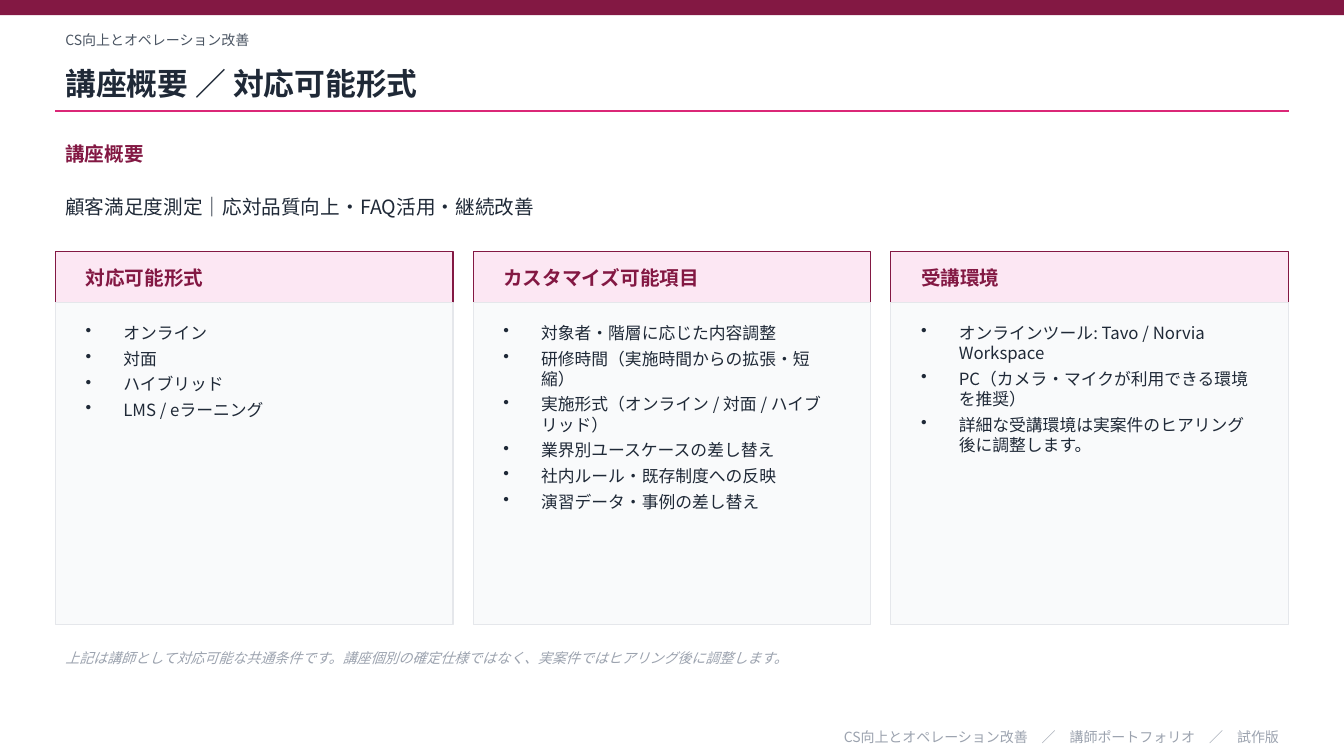
from dataclasses import dataclass

import pptx
import pptx.dml.color
import pptx.enum.shapes
import pptx.enum.text
import pptx.oxml
import pptx.oxml.ns
import pptx.shapes.base
import pptx.slide
import pptx.text.text
import pptx.util

Pt = pptx.util.Pt
Align = pptx.enum.text.PP_ALIGN
Anchor = pptx.enum.text.MSO_ANCHOR

FONT = "Noto Sans CJK JP"
COLORS = {
    "wine": "831843",
    "magenta": "DB2777",
    "pink": "FCE7F3",
    "panel": "F9FAFB",
    "border": "E5E7EB",
    "ink": "1F2937",
    "slate": "4B5563",
    "muted": "9CA3AF",
}

SLIDE_W, SLIDE_H = 960, 540
MARGIN = 39.6
CONTENT_W = SLIDE_W - 2 * MARGIN
GAP = 14.4
CARD_TOP, HEADER_H, BODY_H = 180, 36, 230.4
CARD_PAD = 14.4
BULLET_INDENT = 27


@dataclass(frozen=True)
class Box:
    left: float
    top: float
    width: float
    height: float

    def lengths(self) -> tuple[int, ...]:
        return tuple(Pt(v) for v in (self.left, self.top, self.width, self.height))


@dataclass(frozen=True)
class Card:
    heading: str
    items: tuple[str, ...]


CARDS = (
    Card("対応可能形式", ("オンライン", "対面", "ハイブリッド", "LMS / eラーニング")),
    Card("カスタマイズ可能項目", (
        "対象者・階層に応じた内容調整",
        "研修時間（実施時間からの拡張・短縮）",
        "実施形式（オンライン / 対面 / ハイブリッド）",
        "業界別ユースケースの差し替え",
        "社内ルール・既存制度への反映",
        "演習データ・事例の差し替え",
    )),
    Card("受講環境", (
        "オンラインツール: Tavo / Norvia Workspace",
        "PC（カメラ・マイクが利用できる環境を推奨）",
        "詳細な受講環境は実案件のヒアリング後に調整します。",
    )),
)


def rgb(name: str) -> pptx.dml.color.RGBColor:
    return pptx.dml.color.RGBColor.from_string(COLORS[name])


def add_bullet(p: pptx.text.text._Paragraph) -> None:
    pPr = p._p.get_or_add_pPr()
    pPr.set("marL", str(Pt(BULLET_INDENT)))
    pPr.set("indent", str(-Pt(BULLET_INDENT)))
    bullet = pptx.oxml.parse_xml(f'<a:buChar {pptx.oxml.ns.nsdecls("a")} char="•"/>')
    pPr.append(bullet)
    p.space_after = Pt(4)


def write_text(tf: pptx.text.text.TextFrame, *lines: str, size: float, color: str,
               bold: bool = False, italic: bool = False, bullets: bool = False,
               align: Align = Align.LEFT, anchor: Anchor = Anchor.MIDDLE) -> None:
    """Fill a text frame with one paragraph per line, all in one format."""
    tf.word_wrap = True
    tf.auto_size = pptx.enum.text.MSO_AUTO_SIZE.NONE
    tf.vertical_anchor = anchor
    for i, line in enumerate(lines):
        p = tf.add_paragraph() if i else tf.paragraphs[0]
        p.alignment = align
        if bullets:
            add_bullet(p)
        r = p.add_run()
        r.text = line
        r.font.size = Pt(size)
        r.font.bold = bold
        r.font.italic = italic
        r.font.name = FONT
        r.font.color.rgb = rgb(color)
        east_asian = pptx.oxml.parse_xml(
            f'<a:ea {pptx.oxml.ns.nsdecls("a")} typeface="{FONT}"/>')
        r.font._element.find(pptx.oxml.ns.qn("a:latin")).addnext(east_asian)


def add_label(s: pptx.slide.Slide, box: Box, *lines: str, **style) -> None:
    write_text(s.shapes.add_textbox(*box.lengths()).text_frame, *lines, **style)


def add_rect(s: pptx.slide.Slide, box: Box, fill: str, line: str | None = None) -> None:
    sp = s.shapes.add_shape(pptx.enum.shapes.MSO_SHAPE.RECTANGLE, *box.lengths())
    sp.shadow.inherit = False
    sp.fill.solid()
    sp.fill.fore_color.rgb = rgb(fill)
    if line:
        sp.line.color.rgb = rgb(line)
        sp.line.width = Pt(0.75)
    else:
        sp.line.fill.background()


def add_title_rule(s: pptx.slide.Slide, y: float) -> None:
    rule = s.shapes.add_connector(pptx.enum.shapes.MSO_CONNECTOR.STRAIGHT,
                                  Pt(MARGIN), Pt(y), Pt(MARGIN + CONTENT_W), Pt(y))
    rule.line.color.rgb = rgb("magenta")
    rule.line.width = Pt(1)
    rule._element.spPr.append(
        pptx.oxml.parse_xml(f'<a:effectLst {pptx.oxml.ns.nsdecls("a")}/>'))


def add_card(s: pptx.slide.Slide, card: Card, left: float, width: float) -> None:
    body_top = CARD_TOP + HEADER_H
    text_left, text_w = left + CARD_PAD, width - 2 * CARD_PAD
    add_rect(s, Box(left, CARD_TOP, width, HEADER_H), "pink", "wine")
    add_label(s, Box(text_left, CARD_TOP, text_w, HEADER_H), card.heading,
              size=14, color="wine", bold=True)
    add_rect(s, Box(left, body_top, width, BODY_H), "panel", "border")
    add_label(s, Box(text_left, body_top + 10.8, text_w, 205.2), *card.items,
              size=12, color="ink", bullets=True, anchor=Anchor.TOP)


def main() -> None:
    prs = pptx.Presentation()
    prs.slide_width, prs.slide_height = Pt(SLIDE_W), Pt(SLIDE_H)
    s = prs.slides.add_slide(prs.slide_layouts.get_by_name("Title Only"))

    title = s.shapes.title
    title.left, title.top, title.width, title.height = Box(
        MARGIN, 39.6, CONTENT_W, 39.6).lengths()
    write_text(title.text_frame, "講座概要 ／ 対応可能形式", size=22, color="ink", bold=True)

    add_rect(s, Box(0, 0, SLIDE_W, 10.8), "wine")
    add_label(s, Box(MARGIN, 18, CONTENT_W, 21.6), "CS向上とオペレーション改善",
              size=10, color="slate")
    add_title_rule(s, 79.2)
    add_label(s, Box(MARGIN, 97.2, CONTENT_W, 25.2), "講座概要",
              size=14, color="wine", bold=True)
    add_label(s, Box(MARGIN, 126, CONTENT_W, 43.2),
              "顧客満足度測定｜応対品質向上・FAQ活用・継続改善", size=14, color="ink")

    card_w = (CONTENT_W - GAP * (len(CARDS) - 1)) / len(CARDS)
    for i, card in enumerate(CARDS):
        add_card(s, card, MARGIN + i * (card_w + GAP), card_w)

    add_label(s, Box(MARGIN, 457.2, CONTENT_W, 25.2),
              "上記は講師として対応可能な共通条件です。"
              "講座個別の確定仕様ではなく、実案件ではヒアリング後に調整します。",
              size=10, color="muted", italic=True)
    add_label(s, Box(MARGIN, 518.4, CONTENT_W, 15.84),
              "CS向上とオペレーション改善　／　講師ポートフォリオ　／　試作版",
              size=10, color="muted", align=Align.RIGHT)
    prs.save("out.pptx")


if __name__ == "__main__":
    main()
